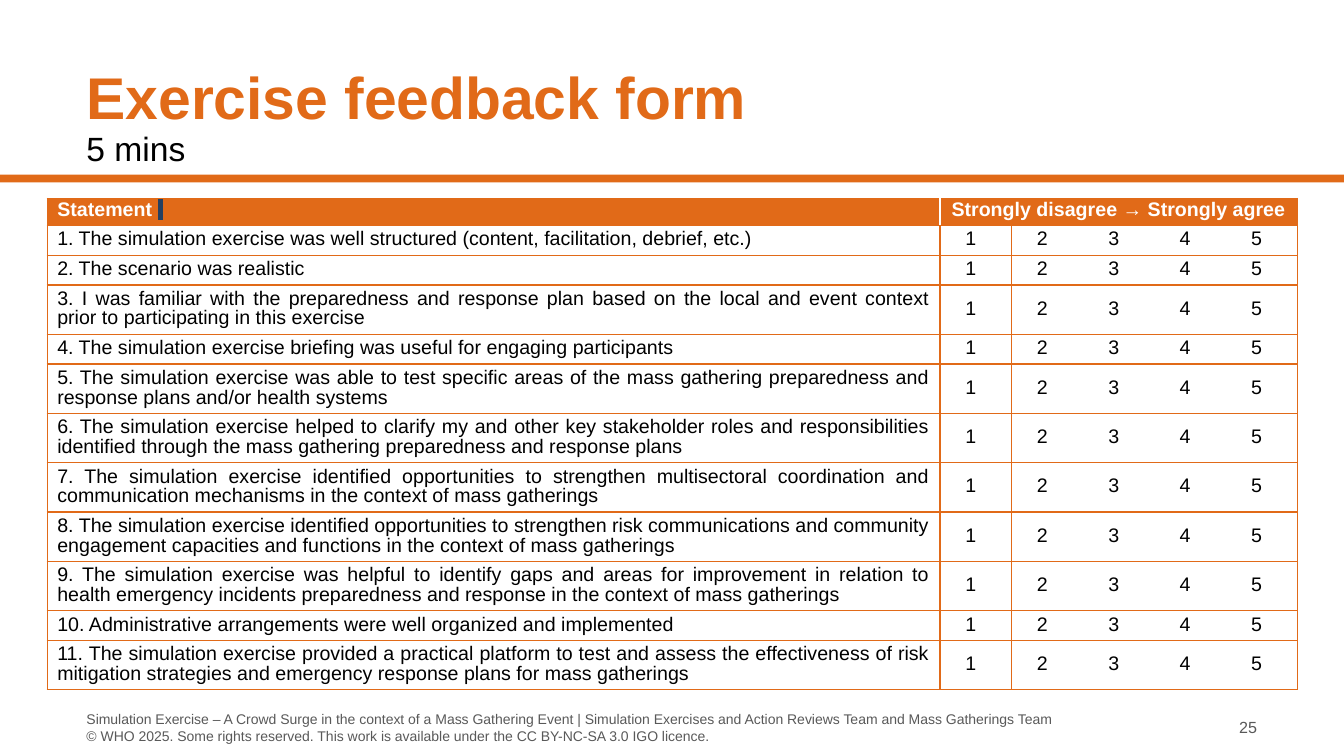
import pptx
import pptx.util
import pptx.dml.color
import pptx.enum.shapes
import pptx.enum.text
import pptx.oxml
import pptx.oxml.ns

Cm = pptx.util.Cm
Pt = pptx.util.Pt
RGBColor = pptx.dml.color.RGBColor
ALIGN = pptx.enum.text.PP_ALIGN
ANCHOR = pptx.enum.text.MSO_ANCHOR

ORANGE = RGBColor(0xE1, 0x6A, 0x18)
WHITE = RGBColor(0xFF, 0xFF, 0xFF)
BLACK = RGBColor(0, 0, 0)
GREY = RGBColor(0x59, 0x59, 0x59)
NAVY = RGBColor(0x24, 0x40, 0x61)

HEAD = {"size": Pt(42), "bold": True, "name": "Arial"}
TIME = {"size": Pt(24), "name": "Arial"}
FOOT = {"size": Pt(10), "name": "Arial"}
PAGE = {"size": Pt(11.5), "name": "Arial"}
CELL = {"size": Pt(14), "bold": False, "name": "Arial"}
BOLD = {**CELL, "bold": True}

SCALE = ["1", "2", "3", "4", "5"]
ITEMS = [
    ("The simulation exercise was well structured (content, facilitation, debrief, etc.)", 1),
    ("The scenario was realistic", 1),
    ("I was familiar with the preparedness and response plan based on the local and event "
     "context prior to participating in this exercise", 2),
    ("The simulation exercise briefing was useful for engaging participants", 1),
    ("The simulation exercise was able to test specific areas of the mass gathering "
     "preparedness and response plans and/or health systems", 2),
    ("The simulation exercise helped to clarify my and other key stakeholder roles and "
     "responsibilities identified through the mass gathering preparedness and response plans", 2),
    ("The simulation exercise identified opportunities to strengthen multisectoral "
     "coordination and communication mechanisms in the context of mass gatherings", 2),
    ("The simulation exercise identified opportunities to strengthen risk communications and "
     "community engagement capacities and functions in the context of mass gatherings", 2),
    ("The simulation exercise was helpful to identify gaps and areas for improvement in "
     "relation to health emergency incidents preparedness and response in the context of "
     "mass gatherings", 2),
    ("Administrative arrangements were well organized and implemented", 1),
    ("The simulation exercise provided a practical platform to test and assess the "
     "effectiveness of risk mitigation strategies and emergency response plans for mass "
     "gatherings", 2),
]
CREDIT = (
    "Simulation Exercise – A Crowd Surge in the context of a Mass Gathering Event | "
    "Simulation Exercises and Action Reviews Team and Mass Gatherings Team\n"
    "© WHO 2025. Some rights reserved. This work is available under the CC BY-NC-SA 3.0 IGO licence."
)


def apply(part, form):
    for key, value in form.items():
        setattr(part, key, value)


def write(par, text, font, color, form):
    par.text = text
    apply(par, form)
    for run in par.runs:
        apply(run.font, font)
        run.font.color.rgb = color


def label(slide, box, text, font, color, frame, form):
    shape = slide.shapes.add_textbox(*map(Cm, box))
    apply(shape.text_frame, {"word_wrap": True, **frame})
    write(shape.text_frame.paragraphs[0], text, font, color, form)


def mark(run, color):
    tag = pptx.oxml.parse_xml(
        f'<a:highlight {pptx.oxml.ns.nsdecls("a")}><a:srgbClr val="{color}"/></a:highlight>')
    run.font.fill._xPr.find(pptx.oxml.ns.qn("a:solidFill")).addnext(tag)


def edge(cell, sides):
    props = cell._tc.get_or_add_tcPr()
    drawn = [side for side in "LRTB" if side in sides]
    for place, side in enumerate(drawn):
        props.insert(place, pptx.oxml.parse_xml(
            f'<a:ln{side} {pptx.oxml.ns.nsdecls("a")} w="{Pt(1)}"><a:solidFill>'
            f'<a:srgbClr val="{sides[side]}"/></a:solidFill></a:ln{side}>'))


def banner(slide, box):
    left, top, width, height = box
    bar = slide.shapes.add_shape(
        pptx.enum.shapes.MSO_SHAPE.RECTANGLE,
        Cm(left), Cm(top + height - 0.2), Cm(width), Cm(0.2))
    bar.shadow.inherit = False
    bar.fill.solid()
    bar.fill.fore_color.rgb = ORANGE
    bar.line.fill.background()
    label(slide, (left + 1.93, top + 1.3, 25, 2), "Exercise feedback form", HEAD, ORANGE,
          {"vertical_anchor": ANCHOR.BOTTOM, "margin_top": 0, "margin_bottom": 0},
          {"line_spacing": 0.8})
    label(slide, (left + 1.93, top + 3.3, 25, 1), "5 mins", TIME, BLACK, {},
          {"line_spacing": 0.8})


def survey(slide, box):
    frame = slide.shapes.add_table(len(ITEMS) + 1, len(SCALE) + 1, *map(Cm, box))
    table = frame.table
    table._tbl.tblPr.find(pptx.oxml.ns.qn("a:tableStyleId")).text = (
        "{2D5ABB26-0587-4C30-8999-92F81FD0307C}")
    apply(table, {"horz_banding": False, "first_row": True})
    narrow = 1.8
    table.columns[0].width = Cm(box[2] - narrow * len(SCALE))
    for step in range(1, len(SCALE) + 1):
        table.columns[step].width = Cm(narrow)

    table.rows[0].height = Cm(0.68)
    table.cell(0, 1).merge(table.cell(0, len(SCALE)))
    for step in range(len(SCALE) + 1):
        cell = table.cell(0, step)
        cell.fill.solid()
        cell.fill.fore_color.rgb = ORANGE
        cell.vertical_anchor = ANCHOR.MIDDLE
        sides = {"T": ORANGE, "B": ORANGE}
        sides.update({0: {"L": ORANGE, "R": WHITE}, 1: {"L": WHITE, "R": ORANGE}}.get(step, {}))
        edge(cell, sides)
    first = table.cell(0, 0).text_frame.paragraphs[0]
    write(first, "Statement ", BOLD, WHITE, {"line_spacing": Pt(12)})
    block = first.add_run()
    block.text = " "
    apply(block.font, CELL)
    block.font.color.rgb = BLACK
    mark(block, NAVY)
    range_cell = table.cell(0, 1)
    apply(range_cell, {"margin_left": 0, "margin_right": 0})
    write(range_cell.text_frame.paragraphs[0], "Strongly disagree → Strongly agree",
          BOLD, WHITE, {"line_spacing": Pt(12), "alignment": ALIGN.CENTER})

    for row, (item, lines) in enumerate(ITEMS, 1):
        table.rows[row].height = Cm(0.26 + 0.49 * lines)
        for step, text in enumerate([f"{row}. {item}"] + SCALE):
            cell = table.cell(row, step)
            cell.fill.background()
            sides = {"T": ORANGE, "B": ORANGE}
            if step < 2:
                sides["L"] = ORANGE
            if step in (0, len(SCALE)):
                sides["R"] = ORANGE
            edge(cell, sides)
            if step:
                apply(cell, {"vertical_anchor": ANCHOR.MIDDLE, "margin_right": Cm(0.5)})
            write(cell.text_frame.paragraphs[0], text, CELL, BLACK,
                  {"line_spacing": Pt(14),
                   "alignment": ALIGN.CENTER if step else ALIGN.JUSTIFY})


def footer(slide, box):
    left, top, width, height = box
    page = 2.5
    middle = {"vertical_anchor": ANCHOR.MIDDLE}
    label(slide, (left, top, width - page, height), CREDIT, FOOT, GREY, middle, {})
    label(slide, (left + width - page, top, page, height), "25", PAGE, GREY, middle,
          {"alignment": ALIGN.RIGHT})


def main():
    deck = pptx.Presentation()
    apply(deck, {"slide_width": Cm(33.87), "slide_height": Cm(19.05)})
    slide = deck.slides.add_slide(deck.slide_layouts[6])
    banner(slide, (0, 0, 33.87, 4.6))
    survey(slide, (1.19, 5, 31.5, 12.36))
    footer(slide, (1.93, 17.88, 30, 0.9))
    deck.save("out.pptx")


if __name__ == "__main__":
    main()
